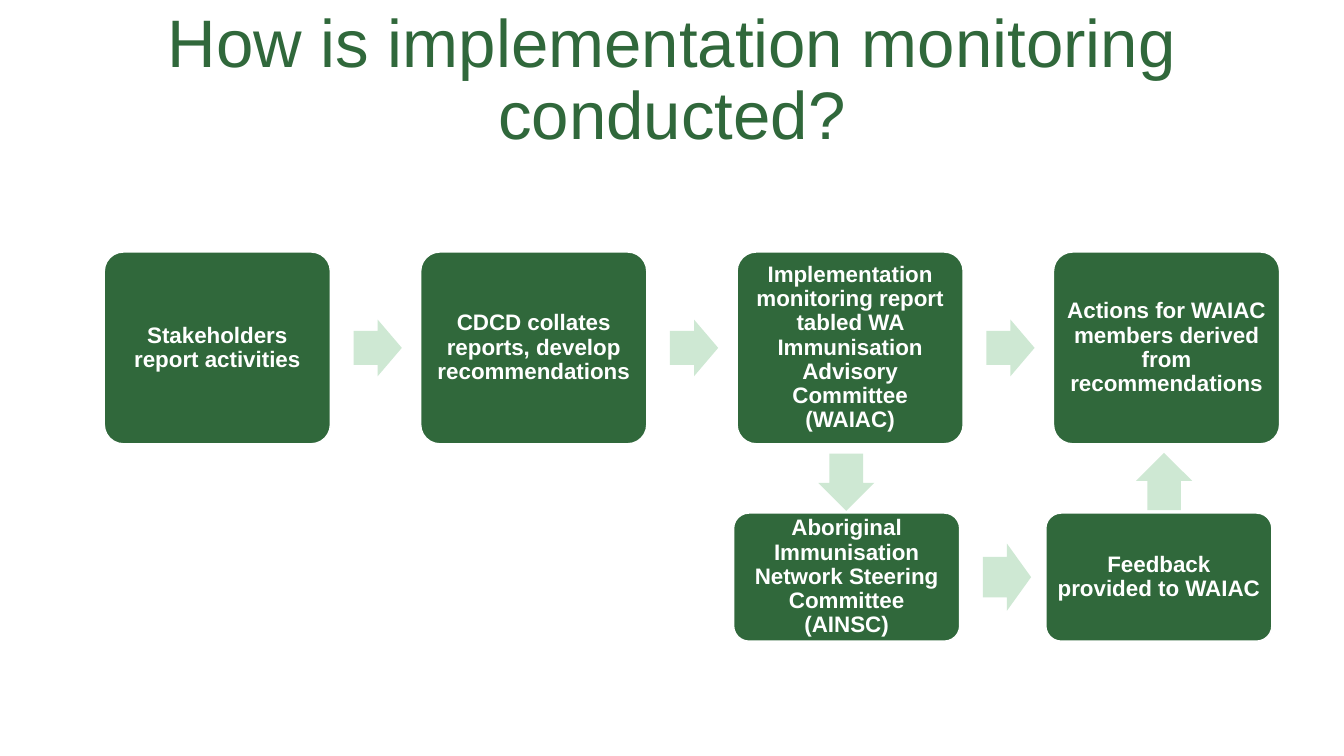
import pptx
import pptx.util
import pptx.dml.color
import pptx.enum.shapes
import pptx.enum.text

Pt = pptx.util.Pt
SHAPE = pptx.enum.shapes.MSO_SHAPE
CENTER = pptx.enum.text.PP_ALIGN.CENTER
MIDDLE = pptx.enum.text.MSO_ANCHOR.MIDDLE

TITLE = "How is implementation monitoring conducted?"
MAIN_STEPS = [
    "Stakeholders report activities",
    "CDCD collates reports, develop recommendations",
    "Implementation monitoring report tabled WA Immunisation Advisory Committee (WAIAC)",
    "Actions for WAIAC members derived from recommendations",
]
FEEDBACK_STEPS = [
    "Aboriginal Immunisation Network Steering Committee (AINSC)",
    "Feedback provided to WAIAC",
]
GREEN, PALE, WHITE = "30683B", "CEE8D3", "FFFFFF"

# Lengths in points
STEP_WIDTH = 161.5
MAIN_LEFT, MAIN_TOP, MAIN_HEIGHT, MAIN_PITCH = 74.5, 180, 137, 226
FEEDBACK_LEFT, FEEDBACK_TOP, FEEDBACK_HEIGHT, FEEDBACK_PITCH = 524, 366.5, 91.5, 223
ARROW_GAP, ARROW_WIDTH = 16.5, 34.5
VERTICAL_ARROWS = [
    (SHAPE.DOWN_ARROW, 584.5, 324),
    (SHAPE.UP_ARROW, 811.5, 323.5),
]


def color(value):
    return pptx.dml.color.RGBColor.from_string(value)


def write(frame, text, size, ink, bold):
    frame.word_wrap = True
    frame.auto_size = pptx.enum.text.MSO_AUTO_SIZE.NONE
    frame.vertical_anchor = MIDDLE
    frame.text = text
    paragraph = frame.paragraphs[0]
    paragraph.alignment = CENTER
    paragraph.line_spacing = 0.9
    font_format = {"name": "Arial", "size": Pt(size), "bold": bold}
    for key, value in font_format.items():
        setattr(paragraph.font, key, value)
    paragraph.font.color.rgb = color(ink)


def add_block(slide, kind, box, fill, adjustments):
    block = slide.shapes.add_shape(kind, *map(Pt, box))
    block.shadow.inherit = False
    block.fill.solid()
    block.fill.fore_color.rgb = color(fill)
    block.line.fill.background()
    for index, value in enumerate(adjustments):
        block.adjustments[index] = value
    return block


def add_arrow(slide, kind, box):
    add_block(slide, kind, box, PALE, (0.6, 0.5))


def add_step(slide, text, box, rounding):
    step = add_block(slide, SHAPE.ROUNDED_RECTANGLE, box, GREEN, (rounding,))
    step.line.color.rgb = color(WHITE)
    step.line.width = Pt(1)
    for side in ("left", "top", "right", "bottom"):
        setattr(step.text_frame, "margin_" + side, Pt(5))
    write(step.text_frame, text, 16, WHITE, True)


def add_row(slide, steps, left, top, height, pitch, rounding, arrow_height):
    """Place steps at an equal pitch with a right arrow between neighbours."""
    arrow_top = top + (height - arrow_height) / 2
    for index, text in enumerate(steps):
        x = left + index * pitch
        add_step(slide, text, (x, top, STEP_WIDTH, height), rounding)
        if index < len(steps) - 1:
            arrow_left = x + STEP_WIDTH + ARROW_GAP
            add_arrow(slide, SHAPE.RIGHT_ARROW,
                      (arrow_left, arrow_top, ARROW_WIDTH, arrow_height))


def main():
    deck = pptx.Presentation()
    deck.slide_width, deck.slide_height = Pt(960), Pt(540)
    slide = deck.slides.add_slide(deck.slide_layouts[5])

    title = slide.shapes.title
    title_box = {"left": 66, "top": 6, "width": 828, "height": 104.5}
    for key, value in title_box.items():
        setattr(title, key, Pt(value))
    write(title.text_frame, TITLE, 48, GREEN, False)

    add_row(slide, MAIN_STEPS, MAIN_LEFT, MAIN_TOP, MAIN_HEIGHT, MAIN_PITCH, 0.1, 40.5)
    add_row(slide, FEEDBACK_STEPS, FEEDBACK_LEFT, FEEDBACK_TOP, FEEDBACK_HEIGHT,
            FEEDBACK_PITCH, 0.12, 48)
    for kind, left, top in VERTICAL_ARROWS:
        add_arrow(slide, kind, (left, top, 40, 41))

    deck.save("out.pptx")


if __name__ == "__main__":
    main()
